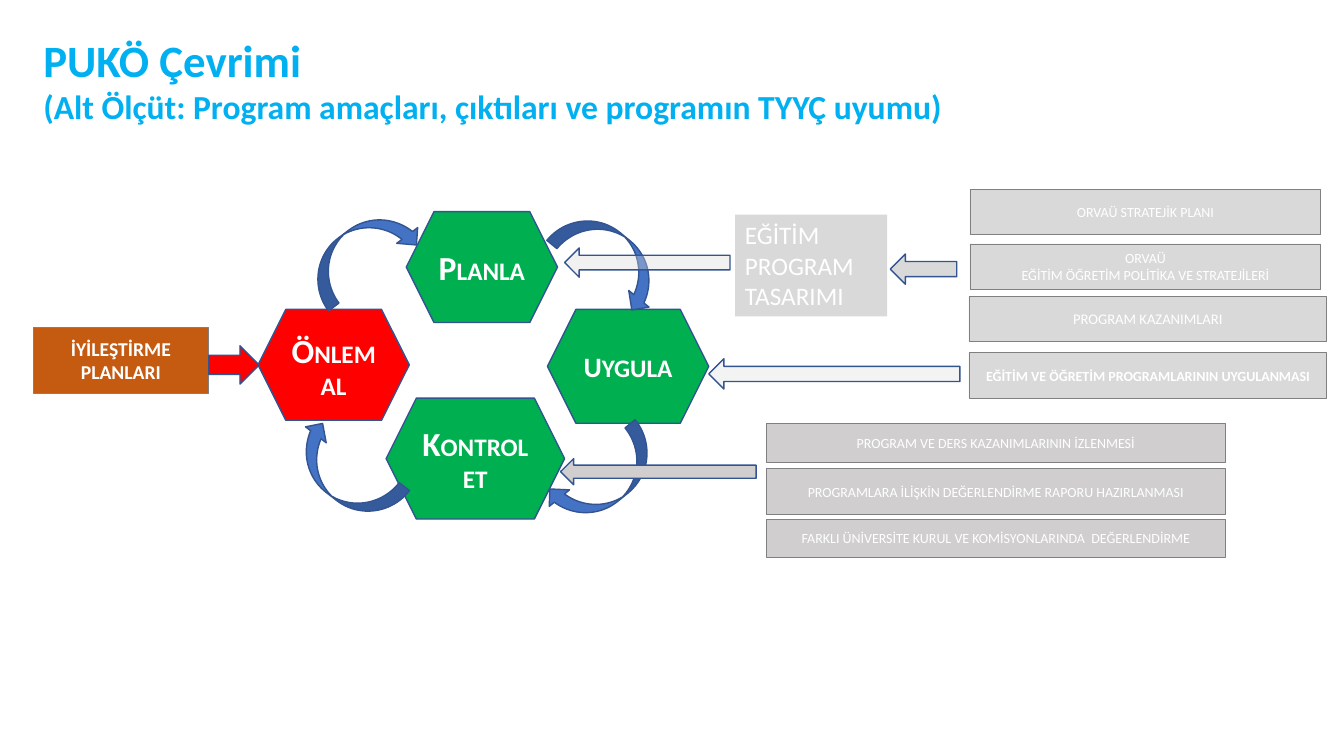
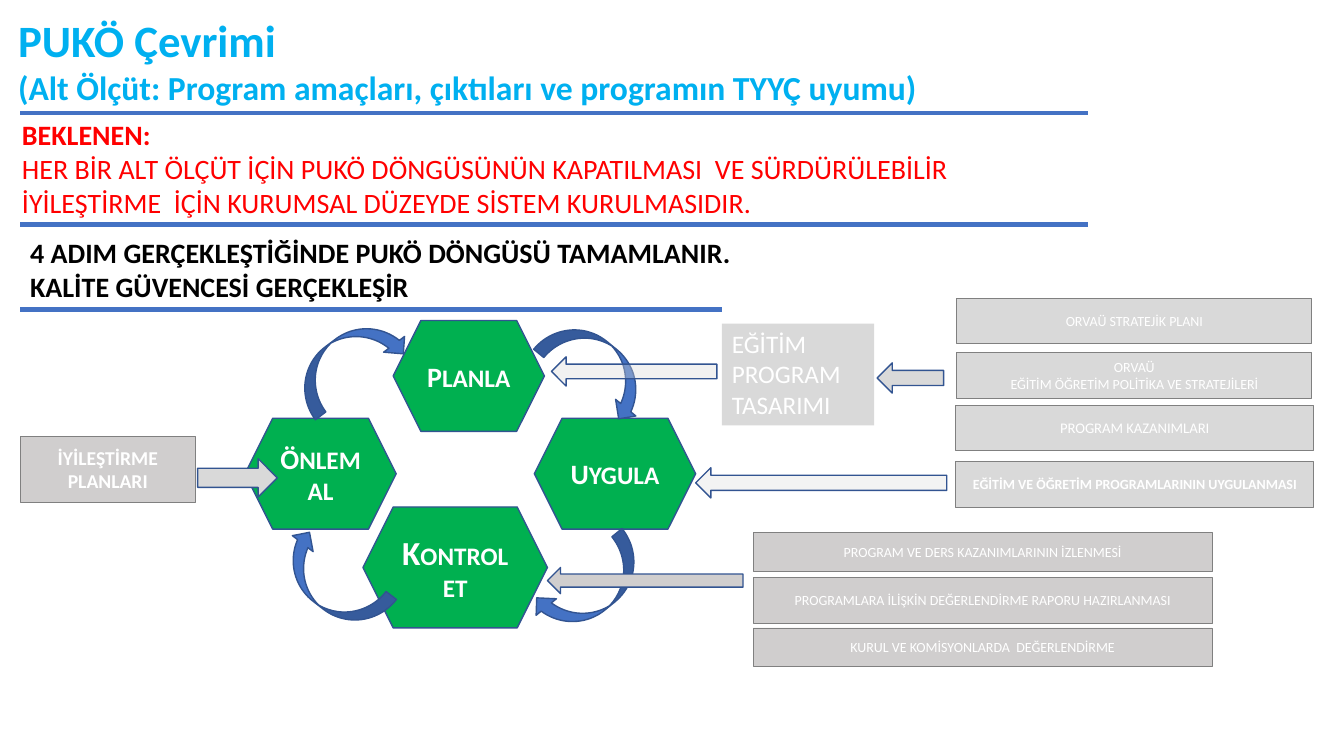
from lxml import etree
from pptx import Presentation
from pptx.dml.color import RGBColor
from pptx.enum.shapes import MSO_CONNECTOR, MSO_SHAPE
from pptx.enum.text import MSO_ANCHOR, MSO_AUTO_SIZE, PP_ALIGN
from pptx.oxml.ns import qn
from pptx.util import Inches, Pt

RECT, HEX = MSO_SHAPE.RECTANGLE, MSO_SHAPE.HEXAGON
LEFT_ARROW, CURVE = MSO_SHAPE.LEFT_ARROW, MSO_SHAPE.CURVED_DOWN_ARROW
STRAIGHT = MSO_CONNECTOR.STRAIGHT
TOP, MIDDLE = MSO_ANCHOR.TOP, MSO_ANCHOR.MIDDLE
LEFT, CENTER = PP_ALIGN.LEFT, PP_ALIGN.CENTER
GROW, FIXED = MSO_AUTO_SIZE.SHAPE_TO_FIT_TEXT, MSO_AUTO_SIZE.NONE

FONT = "Calibri"
COLORS = {
    "title": "00B0F0", "green": "00B050", "red": "FF0000", "blue": "4472C4",
    "edge": "325491", "light": "D9D9D9", "gray": "D0CECE", "frame": "808080",
    "brown": "C55A11", "white": "FFFFFF", "black": "000000",
}


def color(name):
    return RGBColor.from_string(COLORS[name])


def write(shape, paras, ink="white", align=CENTER, anchor=MIDDLE, size=FIXED):
    frame = shape.text_frame
    frame.word_wrap = True
    frame.auto_size = size
    frame.vertical_anchor = anchor
    for i, runs in enumerate(paras):
        para = frame.paragraphs[0] if i == 0 else frame.add_paragraph()
        para.alignment = align
        for text, points, bold in runs:
            run = para.add_run()
            run.text = text
            run.font.name = FONT
            run.font.size = Pt(points)
            run.font.bold = bold
            run.font.color.rgb = color(ink)


def draw(slide, kind, box, fill, line="edge", width=1, turn=0, alpha=None):
    shape = slide.shapes.add_shape(kind, *map(Inches, box))
    shape.shadow.inherit = False
    shape.rotation = turn
    shape.fill.solid()
    shape.fill.fore_color.rgb = color(fill)
    if alpha:
        tint = shape.element.spPr.find(qn("a:solidFill"))[0]
        etree.SubElement(tint, qn("a:alpha")).set("val", str(alpha * 1000))
    if line:
        shape.line.color.rgb = color(line)
        shape.line.width = Pt(width)
    else:
        shape.line.fill.background()
    return shape


def card(slide, box, fill, lines, size=10, bold=False):
    shape = draw(slide, RECT, box, fill, "frame", 0.5)
    write(shape, [[(line, size, bold)] for line in lines])


def head(slide, x, y):
    title = slide.shapes.title
    title.left, title.top, title.width, title.height = map(
        Inches, (x, y, 11.63, 1.04))
    write(title, [
        [("PUKÖ Çevrimi", 32, True)],
        [("(Alt Ölçüt: Program amaçları, çıktıları ve programın TYYÇ uyumu)",
          24, True)],
    ], "title", LEFT, TOP)


def note(slide, box, ink, paras):
    area = slide.shapes.add_textbox(*map(Inches, box))
    write(area, paras, ink, LEFT, TOP, GROW)


def rule(slide, x, y, end):
    line = slide.shapes.add_connector(STRAIGHT, *map(Inches, (x, y, end, y)))
    line.line.color.rgb = color("blue")
    line.line.width = Pt(3.25)
    etree.SubElement(line.element.spPr, qn("a:effectLst"))


def cycle(slide, x, y, steps):
    for (left, top, wide, high), fill, first, rest, size in steps:
        shape = draw(slide, HEX, (x + left, y + top, wide, high), fill)
        write(shape, [[(first, size, True), (rest, 18, True)]])
    for left, top, turn in ((5.12, 0.43, 39.3), (5.05, 2.61, 140.9),
                            (2.48, 2.56, 217.7), (2.65, 0.37, 323.1)):
        draw(slide, CURVE, (x + left, y + top, 1.22, 0.52), "blue", turn=turn)


def inputs(slide, x, y, wide):
    plans = (
        (9.29, 0, wide, ["ORVAÜ STRATEJİK PLANI"], 10, False),
        (9.29, 0.54, wide,
         ["ORVAÜ", "EĞİTİM ÖĞRETİM POLİTİKA VE STRATEJİLERİ"], 10, False),
        (9.28, 1.06, 3.55, ["PROGRAM KAZANIMLARI"], 10.5, False),
        (9.28, 1.62, 3.55,
         ["EĞİTİM VE ÖĞRETİM PROGRAMLARININ UYGULANMASI"], 10, True),
    )
    for left, top, span, lines, size, bold in plans:
        card(slide, (x + left, y + top, span, 0.45), "light", lines, size, bold)
    design = draw(slide, RECT, (x + 6.96, y + 0.25, 1.51, 1.01), "light", None)
    write(design, [[("EĞİTİM PROGRAM TASARIMI", 18, False)]],
          align=LEFT, anchor=TOP)
    for left, top, span, high, fill, alpha in (
            (8.5, 0.64, 0.66, 0.3, "light", None),
            (5.27, 0.58, 1.64, 0.29, "light", 36),
            (6.7, 1.68, 2.49, 0.3, "gray", 24)):
        draw(slide, LEFT_ARROW, (x + left, y + top, span, high), fill,
             alpha=alpha)


def checks(slide, x, y, last):
    rows = (
        (0, 0.39, "PROGRAM VE DERS KAZANIMLARININ İZLENMESİ"),
        (0.45, 0.45, "PROGRAMLARA İLİŞKİN DEĞERLENDİRME RAPORU HAZIRLANMASI"),
        (0.95, 0.38, last),
    )
    for top, high, text in rows:
        card(slide, (x + 2.04, y + top, 4.55, high), "gray", [text])
    draw(slide, LEFT_ARROW, (x, y + 0.35, 1.94, 0.26), "gray")


def remedy(slide, x, y, fill, arrow, tint):
    card(slide, (x, y, 1.74, 0.65), fill, ["İYİLEŞTİRME PLANLARI"], 14, True)
    left, top, wide = arrow
    draw(slide, LEFT_ARROW, (x + left, y + top, wide, 0.38), tint, turn=180)


def diagram(slide, x, y, steps, wide, last, fix):
    cycle(slide, x, y, steps)
    inputs(slide, x, y, wide)
    checks(slide, x + 5.23, y + 2.32, last)
    remedy(slide, x, y + 1.37, *fix)


def first(slide):
    head(slide, 0.33, 0.27)
    steps = (
        ((3.7, 0.22, 1.5, 1.1), "green", "P", "LANLA", 24),
        ((5.1, 1.19, 1.6, 1.13), "green", "U", "YGULA", 20),
        ((3.5, 2.07, 1.77, 1.2), "green", "K", "ONTROL ET", 24),
        ((2.23, 1.19, 1.5, 1.1), "red", "Ö", "NLEM AL", 24),
    )
    diagram(slide, 0.33, 1.88, steps, 3.48,
            "FARKLI ÜNİVERSİTE KURUL VE KOMİSYONLARINDA  DEĞERLENDİRME",
            ("brown", (1.74, 0.18, 0.5), "red"))


def second(slide):
    head(slide, 0.08, 0.08)
    steps = (
        ((3.7, 0.22, 1.5, 1.1), "green", "P", "LANLA", 20),
        ((5.1, 1.19, 1.6, 1.1), "green", "U", "YGULA", 20),
        ((3.4, 2.07, 1.83, 1.2), "green", "K", "ONTROL ET", 24),
        ((2.23, 1.19, 1.5, 1.1), "green", "Ö", "NLEM AL", 20),
    )
    diagram(slide, 0.2, 2.96, steps, 3.52,
            "KURUL VE KOMİSYONLARDA  DEĞERLENDİRME",
            ("gray", (1.76, 0.22, 0.79), "light"))
    note(slide, (0.2, 2.29, 7.31, 0.77), "black", [
        [("4 ADIM GERÇEKLEŞTİĞİNDE PUKÖ DÖNGÜSÜ TAMAMLANIR.", 20, True)],
        [("KALİTE GÜVENCESİ GERÇEKLEŞİR", 20, True)],
    ])
    note(slide, (0.12, 1.12, 10.56, 1.11), "red", [
        [("BEKLENEN:", 20, True)],
        [("HER BİR ALT ÖLÇÜT İÇİN PUKÖ DÖNGÜSÜNÜN KAPATILMASI  VE "
          "SÜRDÜRÜLEBİLİR İYİLEŞTİRME  İÇİN KURUMSAL DÜZEYDE SİSTEM "
          "KURULMASIDIR.", 20, False)],
    ])
    for y, end in ((1.12, 10.79), (3.07, 7.16), (2.23, 10.79)):
        rule(slide, 0.2, y, end)


def main():
    deck = Presentation()
    deck.slide_width, deck.slide_height = Inches(13.33), Inches(7.5)
    for build in (first, second):
        build(deck.slides.add_slide(deck.slide_layouts[5]))
    deck.save("out.pptx")


if __name__ == "__main__":
    main()
